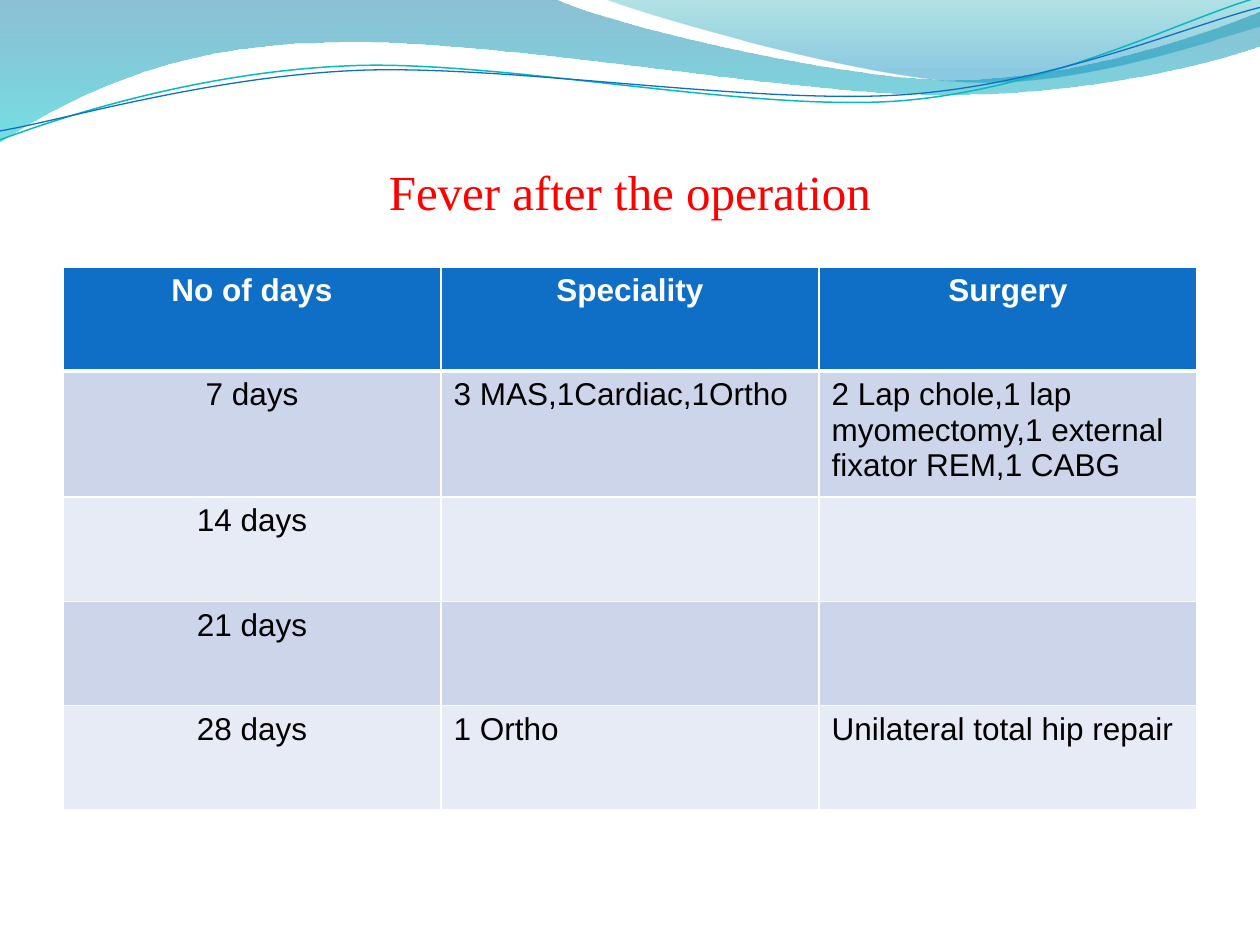
from lxml.etree import SubElement
from pptx import Presentation
from pptx.dml.color import RGBColor
from pptx.enum.text import MSO_ANCHOR, PP_ALIGN
from pptx.oxml.ns import qn
from pptx.util import Cm, Pt

UNITS_PER_CM = 100
FILLED_WAVES = [
    ((0, -0.03),
     [(11.18, -0.03), (12.09, 0.43, 16.87, 1.6, 19.25, 1.6),
      (21.67, 1.6, 24.33, 0.66, 25.4, 0.23), (25.43, 0.91),
      (24.97, 1.12, 22.1, 1.93, 18.95, 1.91),
      (15.8, 1.91, 9.7, 0.71, 6.53, 0.86),
      (3.28, 0.89, 1.17, 2.11, -0.03, 2.87), (0, -0.03)],
     [(0, "0074A1", 45), (1, "00C6CF", 55)]),
    ((12.17, -0.03),
     [(12.93, 0.28, 17.32, 1.57, 19.53, 1.65),
      (21.74, 1.75, 24.41, 0.81, 25.4, 0.53), (25.4, 0), (12.17, -0.03)],
     [(0, "00A1A9", 30), (0.8, "008BBF", 45)]),
]
LINE_WAVES = [
    ((-0.05, 2.22),
     [(1.19, 1.82, 4.02, 1.04, 7.05, 1.06),
      (10.05, 1.07, 15.02, 2.37, 18.08, 2.29),
      (21.13, 2.2, 23.87, 0.91, 25.41, 0.55)],
     "0AB8BF", 0.85),
    ((-0.04, 2.04),
     [(1.16, 1.9, 4.18, 1.15, 7.2, 1.16),
      (10.25, 1.18, 15.13, 2.23, 18.18, 2.17),
      (21.21, 2.1, 23.93, 1.06, 25.45, 0.75)],
     "0F6FC6", 0.75),
]
FEVER_ROWS = [
    ("No of days", "Speciality", "Surgery"),
    ("7 days", "3 MAS,1Cardiac,1Ortho",
     "2 Lap chole,1 lap myomectomy,1 external fixator REM,1 CABG"),
    ("14 days", "", ""),
    ("21 days", "", ""),
    ("28 days", "1 Ortho", "Unilateral total hip repair"),
]


def color(hex_value):
    """Return the colour for a hex string."""
    return RGBColor.from_string(hex_value)


def add_run(paragraph, text, font, size, hex_value, bold=False):
    """Append one formatted run to a paragraph."""
    run = paragraph.add_run()
    run.text = text
    run.font.name = font
    run.font.size = Pt(size)
    run.font.bold = bold
    run.font.color.rgb = color(hex_value)


def to_units(coordinates):
    """Pair flat coordinates in centimetres as points in whole units."""
    units = [round(value * UNITS_PER_CM) for value in coordinates]
    return list(zip(units[::2], units[1::2]))


def add_wave(slide, left, top, start, segments, close):
    """Draw an outline of straight and Bezier segments from left, top."""
    builder = slide.shapes.build_freeform(*to_units(start)[0], scale=Cm(1) / UNITS_PER_CM)
    for segment in segments:
        builder.add_line_segments(to_units(segment), close=False)
    if close:
        builder.add_line_segments([], close=True)
    wave = builder.convert_to_shape(left, top)
    wave.shadow.inherit = False
    steps = wave._element.iter(qn("a:lnTo"))
    steps = iter(list(steps))
    for segment in segments:
        group = [next(steps) for _ in to_units(segment)]
        if len(group) == 3:
            curve = SubElement(group[0].getparent(), qn("a:cubicBezTo"))
            group[0].addprevious(curve)
            for step in group:
                curve.append(step[0])
                step.getparent().remove(step)
    return wave


def add_header_waves(slide, left, top):
    """Draw the translucent bands and thin lines of the header."""
    for start, segments, stops in FILLED_WAVES:
        band = add_wave(slide, left, top, start, segments, True)
        band.line.fill.background()
        band.fill.gradient()
        band.fill.gradient_angle = 270
        for stop, (position, hex_value, _) in zip(band.fill.gradient_stops, stops):
            stop.position = position
            stop.color.rgb = color(hex_value)
        shades = band._element.spPr.iter(qn("a:srgbClr"))
        for shade, (_, _, opacity) in zip(shades, stops):
            SubElement(shade, qn("a:alpha"), val=str(opacity * 1000))
    for start, segments, hex_value, width in LINE_WAVES:
        thread = add_wave(slide, left, top, start, segments, False)
        thread.rotation = 357.3
        thread.fill.background()
        thread.line.color.rgb = color(hex_value)
        thread.line.width = Pt(width)


def add_title(slide, left, top, width, height):
    """Place the centred title at the bottom of its box."""
    frame = slide.shapes.add_textbox(left, top, width, height).text_frame
    frame.word_wrap = True
    frame.vertical_anchor = MSO_ANCHOR.BOTTOM
    frame.margin_left = frame.margin_right = frame.margin_bottom = 0
    heading = frame.paragraphs[0]
    heading.alignment = PP_ALIGN.CENTER
    add_run(heading, "Fever after the operation", "Times New Roman", 28, "FF0000")


def set_header_borders(cell):
    """Give a header cell white borders with a thick bottom."""
    properties = cell._tc.get_or_add_tcPr()
    for side, width in {"L": 1, "R": 1, "T": 1, "B": 3}.items():
        border = SubElement(properties, qn("a:ln" + side), w=str(Pt(width)))
        fill = SubElement(border, qn("a:solidFill"))
        SubElement(fill, qn("a:srgbClr"), val="FFFFFF")


def add_fever_table(slide, left, top, width, height):
    """Place the table of fever cases by days after surgery."""
    table = slide.shapes.add_table(
        len(FEVER_ROWS), len(FEVER_ROWS[0]), left, top, width, height).table
    for row, texts in enumerate(FEVER_ROWS):
        header = row == 0
        band = "0F6FC6" if header else ("E7EBF5", "CCD5EA")[row % 2]
        for column, text in enumerate(texts):
            cell = table.cell(row, column)
            if header:
                set_header_borders(cell)
            cell.fill.solid()
            cell.fill.fore_color.rgb = color(band)
            if text:
                entry = cell.text_frame.paragraphs[0]
                centred = header or column == 0
                entry.alignment = PP_ALIGN.CENTER if centred else PP_ALIGN.LEFT
                add_run(entry, text, "Arial", 18, "FFFFFF" if header else "000000", header)


def main():
    """Build and save the presentation."""
    presentation = Presentation()
    presentation.slide_width = Cm(25.4)
    presentation.slide_height = Cm(19.05)
    slide = presentation.slides.add_slide(presentation.slide_layouts[6])
    add_header_waves(slide, Cm(0), Cm(0))
    add_title(slide, Cm(1.27), Cm(1.96), Cm(22.86), Cm(2.49))
    add_fever_table(slide, Cm(1.27), Cm(5.38), Cm(22.86), Cm(10.5))
    presentation.save("out.pptx")


if __name__ == "__main__":
    main()
